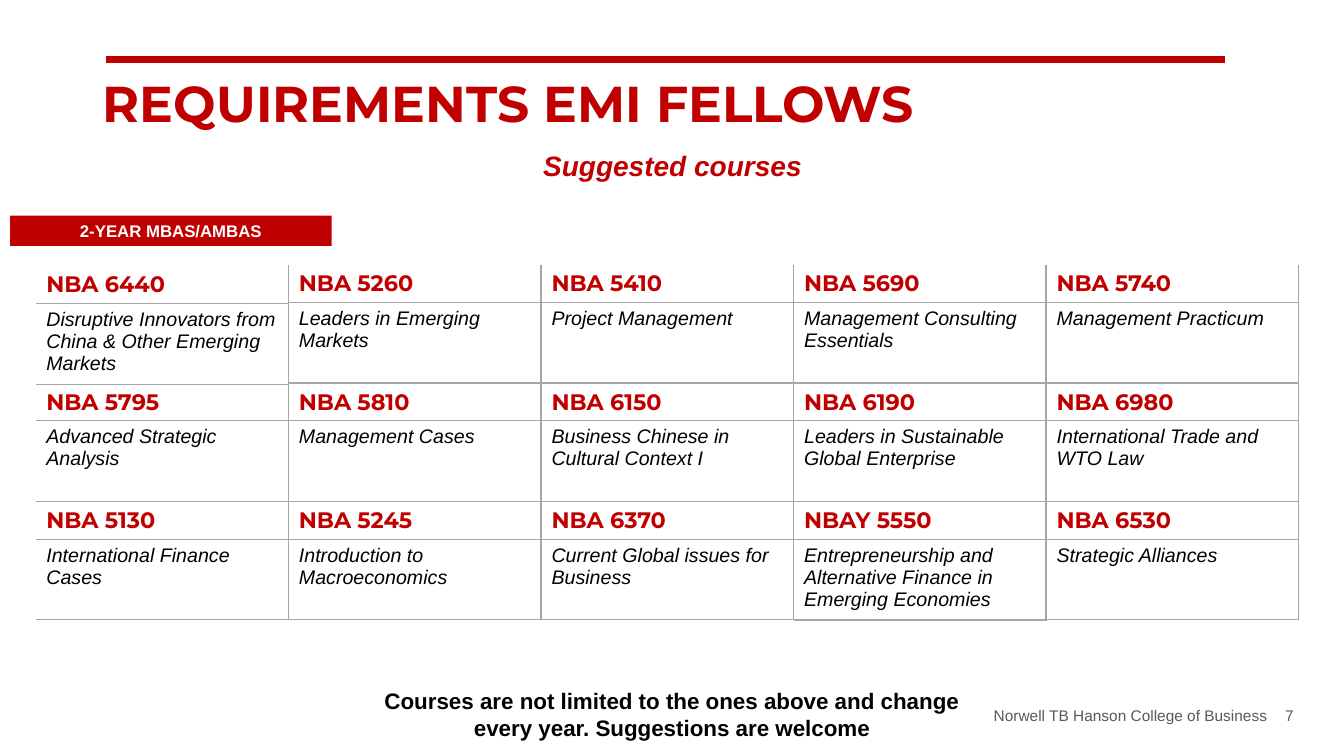
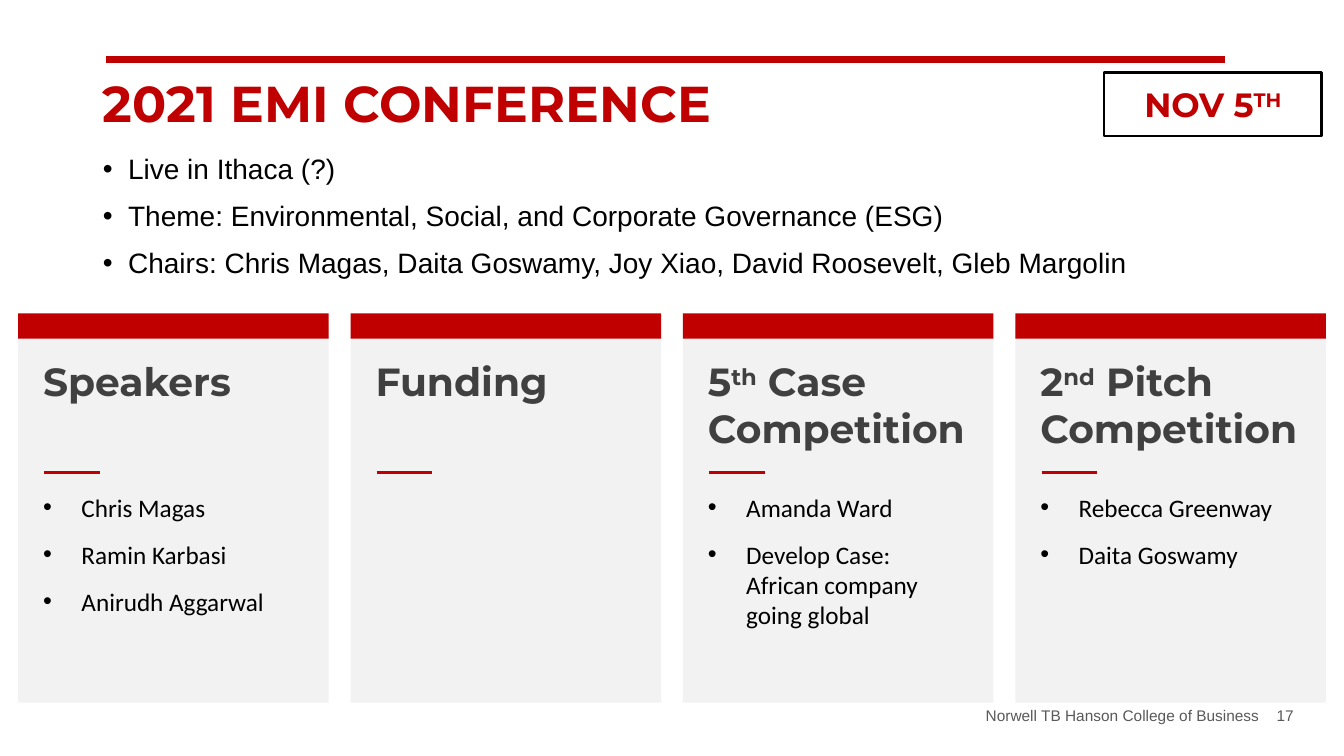
from lxml import etree
from pptx import Presentation
from pptx.dml.color import RGBColor
from pptx.enum.shapes import MSO_CONNECTOR, MSO_SHAPE
from pptx.enum.text import MSO_ANCHOR as Anchor, MSO_AUTO_SIZE as AutoSize, PP_ALIGN as Align
from pptx.oxml.ns import qn
from pptx.util import Inches, Pt

COLORS = {
    "red": "C00000", "black": "000000", "white": "FFFFFF", "dark": "404040",
    "footer": "595959", "border": "A6A6A6", "panel": "F2F2F2",
}
STYLES = {
    "title": ("Montserrat", 36, "red", True, False),
    "subtitle": ("Arial", 20, "red", True, True),
    "tag": ("Arial", 12, "white", True, False),
    "code": ("Montserrat", 16, "red", True, False),
    "course": ("Arial", 14, "black", False, True),
    "note": ("Arial", 16, "black", True, False),
    "footer": ("Arial", 11, "footer", False, False),
    "body": ("Arial", 20, "black", False, False),
    "date": ("Montserrat", 24, "red", True, False),
    "card title": ("Montserrat", 28, "dark", True, False),
    "card list": ("Calibri", 18, "black", False, False),
}
FOOTER = "Norwell TB Hanson College of Business"
NO_TABLE_STYLE = "{2D5ABB26-0587-4C30-8999-92F81FD0307C}"

COURSES = [
    [("NBA 6440", "Disruptive Innovators from China & Other Emerging Markets"),
     ("NBA 5260", "Leaders in Emerging Markets"),
     ("NBA 5410", "Project Management"),
     ("NBA 5690", "Management Consulting Essentials"),
     ("NBA 5740", "Management Practicum")],
    [("NBA 5795", "Advanced Strategic Analysis"),
     ("NBA 5810", "Management Cases"),
     ("NBA 6150", "Business Chinese in Cultural Context I"),
     ("NBA 6190", "Leaders in Sustainable Global Enterprise"),
     ("NBA 6980", "International Trade and WTO Law")],
    [("NBA 5130", "International Finance Cases"),
     ("NBA 5245", "Introduction to Macroeconomics"),
     ("NBA 6370", "Current Global issues for Business"),
     ("NBAY 5550", "Entrepreneurship and Alternative Finance in Emerging Economies"),
     ("NBA 6530", "Strategic Alliances")],
]
COURSE_HEIGHTS = (0.37, 0.8)
SPECIAL_HEIGHTS = {"NBA 6440": (0.38, 0.41)}
NOTE = "Courses are not limited to the ones above and change every year. Suggestions are welcome"

CONFERENCE = [
    "Live in Ithaca (?)",
    "Theme: Environmental, Social, and Corporate Governance (ESG)",
    "Chairs: Chris Magas, Daita Goswamy, Joy Xiao, David Roosevelt, Gleb Margolin",
]
DATE = [("NOV 5", False), ("TH", True)]
CARDS = [
    ("Speakers", ["Chris Magas", "Ramin Karbasi", "Anirudh Aggarwal"]),
    ("Funding", []),
    ([("5", False), ("th", True), (" Case Competition", False)],
     ["Amanda Ward", "Develop Case: African company going global"]),
    ([("2", False), ("nd", True), (" Pitch Competition", False)],
     ["Rebecca Greenway", "Daita Goswamy"]),
]


def rgb(name):
    return RGBColor.from_string(COLORS[name])


def place(shape, left, top, width, height):
    shape.left, shape.top = Inches(left), Inches(top)
    shape.width, shape.height = Inches(width), Inches(height)


def add_bullet(para, indent):
    props = para._p.get_or_add_pPr()
    props.set("marL", str(Inches(indent)))
    props.set("indent", str(-Inches(indent)))
    etree.SubElement(props, qn("a:buFont")).set("typeface", "Arial")
    etree.SubElement(props, qn("a:buChar")).set("char", "•")


def write(frame, paragraphs, style, align=Align.LEFT, before=0, spacing=1.0, indent=0):
    font_name, size, color, bold, italic = STYLES[style]
    for index, content in enumerate(paragraphs):
        para = frame.add_paragraph() if index else frame.paragraphs[0]
        para.alignment = align
        para.space_before = Pt(before)
        para.line_spacing = spacing
        if indent:
            add_bullet(para, indent)
        spans = [(content, False)] if isinstance(content, str) else content
        for text, raised in spans:
            span = para.add_run()
            span.text = text
            font = span.font
            font.name, font.size = font_name, Pt(size)
            font.bold, font.italic = bold, italic
            font.color.rgb = rgb(color)
            if raised:
                font._element.set("baseline", "30000")


def add_text(shapes, area, paragraphs, style, **layout):
    box = shapes.add_textbox(*map(Inches, area))
    box.text_frame.word_wrap = True
    write(box.text_frame, paragraphs, style, **layout)


def add_block(shapes, area, fill=None, line=None):
    block = shapes.add_shape(MSO_SHAPE.RECTANGLE, *map(Inches, area))
    block.shadow.inherit = False
    if fill:
        block.fill.solid()
        block.fill.fore_color.rgb = rgb(fill)
    else:
        block.fill.background()
    if line:
        block.line.color.rgb = rgb(line)
        block.line.width = Pt(2)
    else:
        block.line.fill.background()
    block.text_frame.vertical_anchor = Anchor.MIDDLE
    return block


def add_rule(shapes, left, right, top, weight):
    rule = shapes.add_connector(
        MSO_CONNECTOR.STRAIGHT, Inches(left), Inches(top), Inches(right), Inches(top))
    rule.line.color.rgb = rgb("red")
    rule.line.width = Pt(weight)
    etree.SubElement(rule._element.spPr, qn("a:effectLst"))


def fill_placeholder(holder, area, paragraphs, style, **layout):
    place(holder, *area)
    frame = holder.text_frame
    frame.auto_size = AutoSize.NONE
    frame.vertical_anchor = Anchor.TOP
    write(frame, paragraphs, style, spacing=0.9, **layout)


def add_page(deck, layout_name, title, number):
    page = deck.slides.add_slide(deck.slide_layouts.get_by_name(layout_name))
    add_rule(page.shapes, 1.05, 12.15, 0.59, 5)
    fill_placeholder(page.shapes.title, (0.92, 0.73, 12.31, 1.34), [title], "title")
    right, top, height = 12.93, 6.96, 0.4
    gap = 0.18 + 0.08 * len(number)
    add_text(page.shapes, (right - 0.6, top, 0.6, height), [number], "footer", align=Align.RIGHT)
    add_text(page.shapes, (right - gap - 5, top, 5, height), [FOOTER], "footer", align=Align.RIGHT)
    return page


def add_borders(cell, sides):
    props = cell._tc.get_or_add_tcPr()
    for index, side in enumerate(sides):
        line = etree.Element(qn(side), w=str(Pt(1)))
        fill = etree.SubElement(line, qn("a:solidFill"))
        etree.SubElement(fill, qn("a:srgbClr")).set("val", COLORS["border"])
        props.insert(index, line)


def add_course(page, left, top, course):
    width, heights = 2.5, SPECIAL_HEIGHTS.get(course[0], COURSE_HEIGHTS)
    table = page.shapes.add_table(
        2, 1, Inches(left), Inches(top), Inches(width), Inches(sum(heights))).table
    table.first_row = table.horz_banding = False
    table._tbl.tblPr.find(qn("a:tableStyleId")).text = NO_TABLE_STYLE
    parts = (
        ("code", Anchor.MIDDLE, ("a:lnR", "a:lnB")),
        ("course", Anchor.TOP, ("a:lnR", "a:lnT", "a:lnB")),
    )
    for row, height, text, (style, anchor, sides) in zip(table.rows, heights, course, parts):
        row.height = Inches(height)
        cell = row.cells[0]
        cell.fill.background()
        cell.vertical_anchor = anchor
        write(cell.text_frame, [text], style)
        add_borders(cell, sides)


def build_requirements(deck):
    page = add_page(deck, "Title Only", "REQUIREMENTS EMI FELLOWS", "7")
    add_text(page.shapes, (0.58, 1.42, 12.18, 0.44), ["Suggested courses"], "subtitle",
             align=Align.CENTER, before=12)
    tag = add_block(page.shapes, (0.1, 2.14, 3.19, 0.3), "red")
    write(tag.text_frame, ["2-YEAR MBAS/AMBAS"], "tag", align=Align.CENTER)
    left, right, top, bottom = 0.36, 10.38, 2.63, 4.98
    for line, courses in enumerate(COURSES):
        course_top = top + line * (bottom - top) / (len(COURSES) - 1)
        for column, course in enumerate(courses):
            course_left = left + column * (right - left) / (len(courses) - 1)
            add_course(page, course_left, course_top, course)
    add_text(page.shapes, (3.55, 6.77, 6.23, 0.64), [NOTE], "note",
             align=Align.CENTER, before=12)


def add_card(page, left, title, items):
    width = 3.08
    shapes = page.shapes.add_group_shape().shapes
    add_block(shapes, (left, 3.23, width, 3.74), "panel")
    add_block(shapes, (left, 3.11, width, 0.25), "red")
    add_text(shapes, (left + 0.15, 3.5, 2.81, 1.04), [title], "card title")
    add_rule(shapes, left + 0.26, left + 0.81, 4.69, 2.25)
    if items:
        add_text(shapes, (left + 0.15, 4.83, 2.7, 1.48), items, "card list",
                 before=12, indent=0.38)


def build_conference(deck):
    page = add_page(deck, "Title and Content", "2021 EMI CONFERENCE", "17")
    fill_placeholder(page.placeholders[1], (0.92, 1.49, 10.97, 1.45), CONFERENCE, "body",
                     before=12, indent=0.25)
    date = add_block(page.shapes, (10.95, 0.72, 2.16, 0.63), line="black")
    write(date.text_frame, [DATE], "date", align=Align.CENTER)
    first, last = 0.18, 10.07
    for index, (title, items) in enumerate(CARDS):
        add_card(page, first + index * (last - first) / (len(CARDS) - 1), title, items)


def main():
    deck = Presentation()
    deck.slide_width, deck.slide_height = Inches(13.33), Inches(7.5)
    build_requirements(deck)
    build_conference(deck)
    deck.save("out.pptx")


if __name__ == "__main__":
    main()
